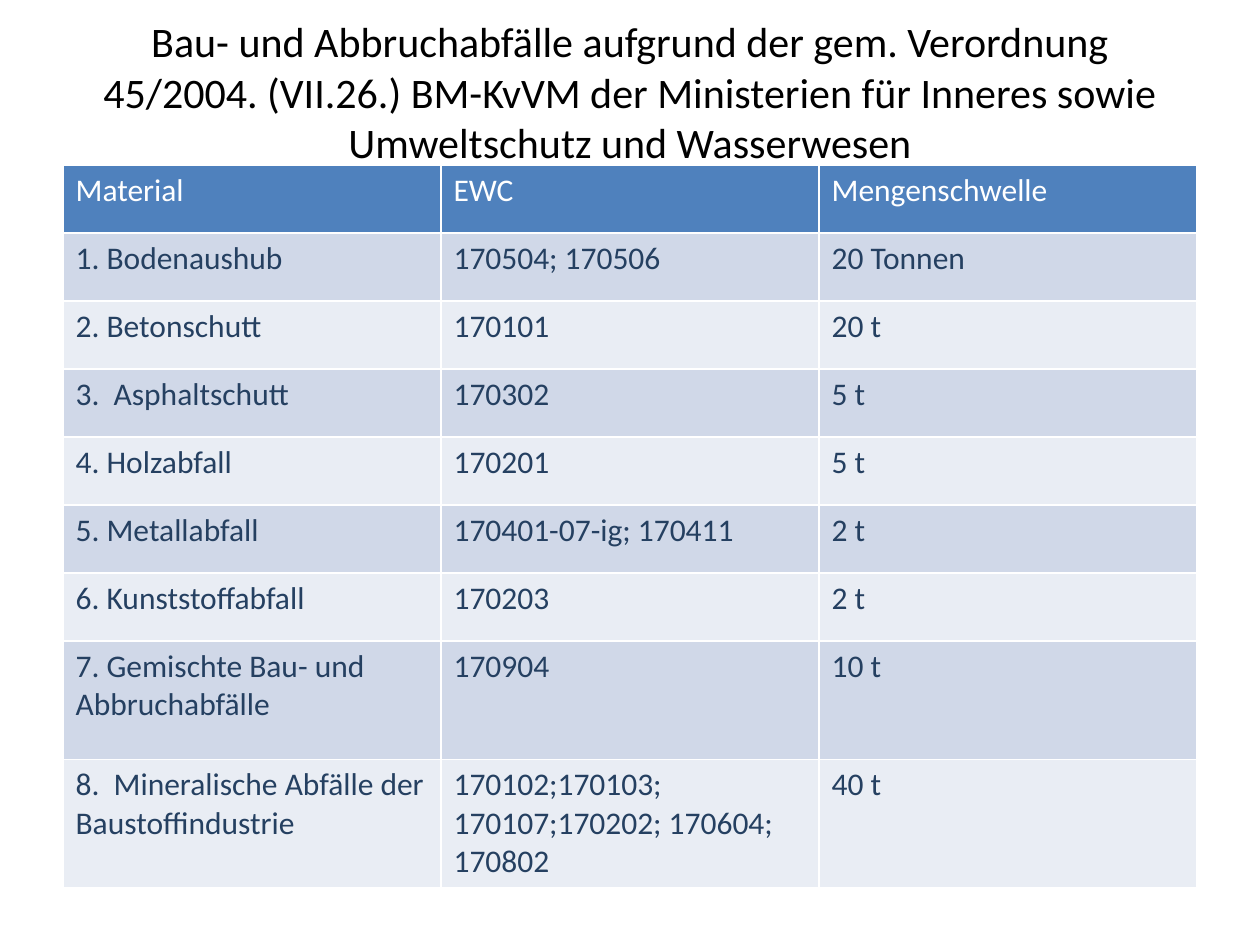
from pptx import Presentation
from pptx.dml.color import RGBColor
from pptx.enum import text
from pptx.util import Inches, Pt

TITLE = ("Bau- und Abbruchabfälle aufgrund der gem. Verordnung 45/2004. (VII.26.) "
         "BM-KvVM der Ministerien für Inneres sowie Umweltschutz und Wasserwesen")
ROWS = [
    ("Material", "EWC", "Mengenschwelle"),
    ("1. Bodenaushub", "170504; 170506", "20 Tonnen"),
    ("2. Betonschutt", "170101", "20 t"),
    ("3.  Asphaltschutt", "170302", "5 t"),
    ("4. Holzabfall", "170201", "5 t"),
    ("5. Metallabfall", "170401-07-ig; 170411", "2 t"),
    ("6. Kunststoffabfall", "170203", "2 t"),
    ("7. Gemischte Bau- und Abbruchabfälle", "170904", "10 t"),
    ("8.  Mineralische Abfälle der Baustoffindustrie",
     "170102;170103; 170107;170202; 170604;\n170802", "40 t"),
]
ROW_HEIGHTS = [0.54] * 7 + [0.94] * 2
HEADER_FILL = "4F81BD"
BAND_FILLS = ("E9EDF4", "D0D8E8")
LEFT, WIDTH = 0.5, 9


def format_text(frame, size, color):
    for paragraph in frame.paragraphs:
        font = paragraph.font
        for name, value in {"name": "Calibri", "size": Pt(size), "bold": False}.items():
            setattr(font, name, value)
        font.color.rgb = RGBColor.from_string(color)


def add_title(slide):
    title = slide.shapes.title
    title.left, title.top, title.width, title.height = map(Inches, (LEFT, 0.3, WIDTH, 0.85))
    frame = title.text_frame
    frame.text = TITLE
    frame.auto_size = text.MSO_AUTO_SIZE.NONE
    frame.vertical_anchor = text.MSO_ANCHOR.MIDDLE
    frame.paragraphs[0].alignment = text.PP_ALIGN.CENTER
    format_text(frame, 24, "000000")


def add_waste_table(slide):
    table = slide.shapes.add_table(
        len(ROWS), len(ROWS[0]), Inches(LEFT), Inches(1.31),
        Inches(WIDTH), Inches(sum(ROW_HEIGHTS))).table
    for index, (values, height) in enumerate(zip(ROWS, ROW_HEIGHTS)):
        row = table.rows[index]
        row.height = Inches(height)
        fill = BAND_FILLS[index % 2] if index else HEADER_FILL
        for cell, value in zip(row.cells, values):
            cell.text = value
            cell.fill.solid()
            cell.fill.fore_color.rgb = RGBColor.from_string(fill)
            format_text(cell.text_frame, 18, "254061" if index else "FFFFFF")


def main():
    presentation = Presentation()
    presentation.slide_width, presentation.slide_height = Inches(10), Inches(7.5)
    slide = presentation.slides.add_slide(presentation.slide_layouts.get_by_name("Title Only"))
    add_title(slide)
    add_waste_table(slide)
    presentation.save("out.pptx")


if __name__ == "__main__":
    main()
